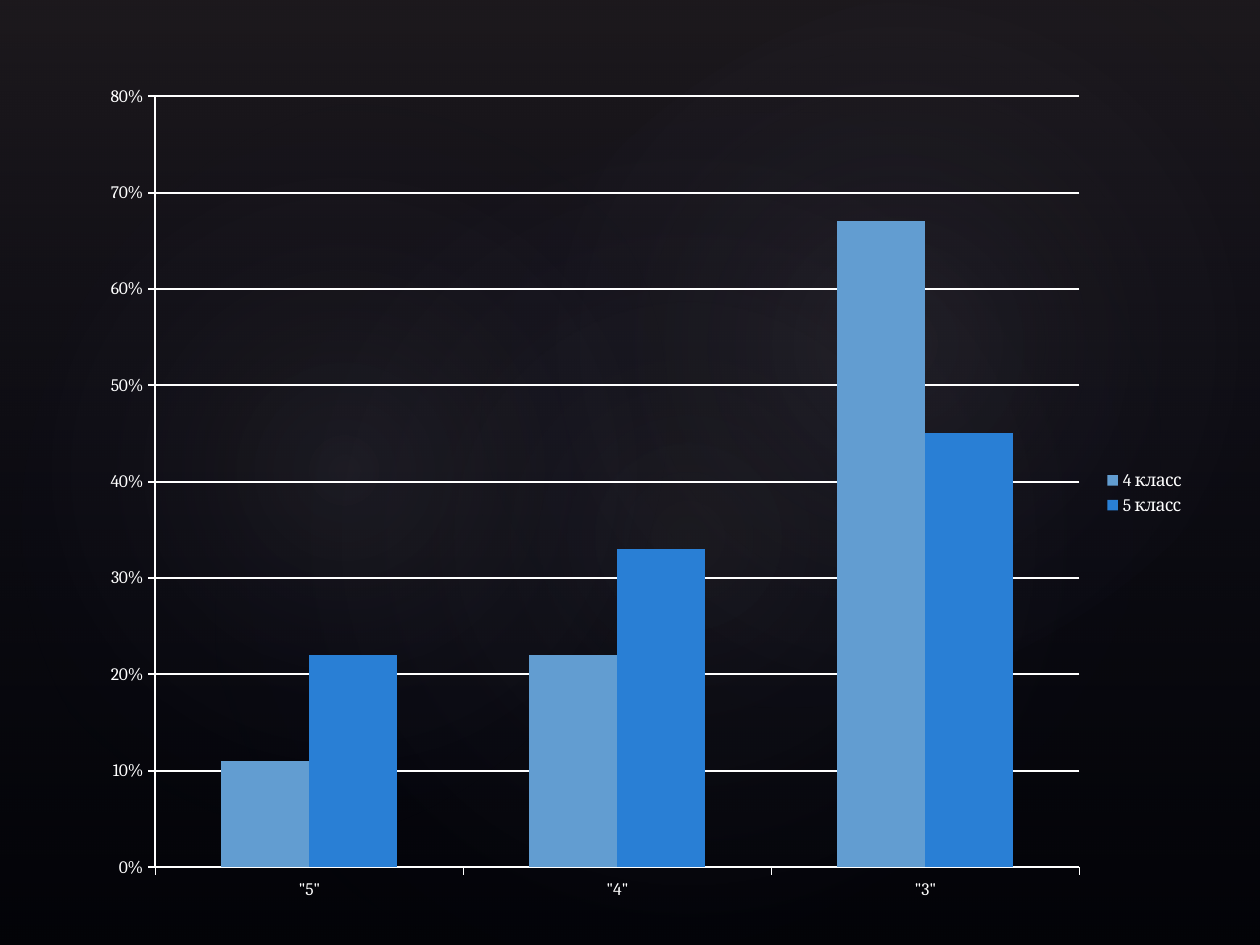
from dataclasses import dataclass

from lxml import etree
from pptx import Presentation
from pptx.chart.data import CategoryChartData
from pptx.dml.color import RGBColor
from pptx.enum.chart import XL_CHART_TYPE, XL_LEGEND_POSITION, XL_TICK_MARK
from pptx.enum.shapes import MSO_SHAPE
from pptx.oxml.ns import qn
from pptx.util import Cm, Pt

COLUMNS = XL_CHART_TYPE.COLUMN_CLUSTERED
LEGEND_RIGHT = XL_LEGEND_POSITION.RIGHT
TICK_OUTSIDE = XL_TICK_MARK.OUTSIDE
TICK_NONE = XL_TICK_MARK.NONE
RECTANGLE = MSO_SHAPE.RECTANGLE
ELLIPSE = MSO_SHAPE.OVAL

SLIDE_WIDTH, SLIDE_HEIGHT = 25.4, 19.05

# left, top, width, height, rotation, opacity of the centre in percent
GLOWS = [
    (3.81, 2.9, 20.12, 15.85, 328.7, 7),
    (-0.76, 3.25, 15.39, 12.45, 294.3, 8),
    (9.09, 0.33, 18.01, 13.21, 328.7, 8),
]
GRADES = ['"5"', '"4"', '"3"']
SHARES = {"4 класс ": (0.11, 0.22, 0.67), "5 класс ": (0.22, 0.33, 0.45)}


@dataclass(frozen=True)
class Theme:
    background: str = "000000"
    veil: str = "504652"
    glow: str = "C4BCC6"
    night: str = "242852"
    text: str = "FFFFFF"
    series: tuple = ("629DD1", "297FD5")
    font: str = "Cambria"
    text_size: float = 10
    grid_width: float = 1.15
    axis_width: float = 0.75


def set_values(target, values):
    for name, value in values.items():
        setattr(target, name, value)


class SlideBuilder:
    def __init__(self, slide, theme):
        self.slide = slide
        self.theme = theme

    def background(self):
        fill = self.slide.background.fill
        fill.solid()
        fill.fore_color.rgb = RGBColor.from_string(self.theme.background)

    def gradient_shape(self, kind, box, stops, rotation=0, angle=None):
        """Stops are (position, colour, opacity) in percent; no angle means radial."""
        shape = self.slide.shapes.add_shape(kind, *map(Cm, box))
        shape.shadow.inherit = False
        shape.rotation = rotation
        shape.line.fill.background()
        shape.fill.gradient()
        gradient = shape.element.spPr.find(qn("a:gradFill"))
        for child in list(gradient):
            gradient.remove(child)
        stop_list = etree.SubElement(gradient, qn("a:gsLst"))
        for position, colour, opacity in stops:
            stop = etree.SubElement(stop_list, qn("a:gs"), pos=str(position * 1000))
            paint = etree.SubElement(stop, qn("a:srgbClr"), val=colour)
            etree.SubElement(paint, qn("a:alpha"), val=str(opacity * 1000))
        if angle is None:
            path = etree.SubElement(gradient, qn("a:path"), path="circle")
            centre = dict.fromkeys("ltrb", "50000")
            etree.SubElement(path, qn("a:fillToRect"), centre)
        else:
            etree.SubElement(gradient, qn("a:lin"), ang=str(angle * 60000), scaled="0")

    def line_style(self, line, width):
        line.width = Pt(width)
        line.color.rgb = RGBColor.from_string(self.theme.text)

    def column_chart(self, box, categories, series):
        theme = self.theme
        data = CategoryChartData(number_format="0%")
        data.categories = categories
        for name, values in series.items():
            data.add_series(name, values)
        chart = self.slide.shapes.add_chart(COLUMNS, *map(Cm, box), data).chart
        set_values(chart, {"has_title": False, "has_legend": True})
        set_values(chart.font, {"name": theme.font, "size": Pt(theme.text_size)})
        chart.font.color.rgb = RGBColor.from_string(theme.text)
        set_values(chart.legend, {"position": LEGEND_RIGHT, "include_in_layout": False})

        plot = chart.plots[0]
        set_values(plot, {"gap_width": 150, "overlap": 0, "vary_by_categories": False})
        for column, colour in zip(plot.series, theme.series):
            column.format.fill.solid()
            column.format.fill.fore_color.rgb = RGBColor.from_string(colour)

        ticks = {"major_tick_mark": TICK_OUTSIDE, "minor_tick_mark": TICK_NONE}
        scale = {"minimum_scale": 0, "maximum_scale": 0.8, "major_unit": 0.1}
        set_values(chart.category_axis, ticks)
        set_values(chart.value_axis, {**ticks, **scale, "has_major_gridlines": True})
        labels = {"number_format": "0%", "number_format_is_linked": False}
        set_values(chart.value_axis.tick_labels, labels)
        self.line_style(chart.category_axis.format.line, theme.axis_width)
        self.line_style(chart.value_axis.format.line, theme.grid_width)
        self.line_style(chart.value_axis.major_gridlines.format.line, theme.grid_width)


def main():
    presentation = Presentation()
    presentation.slide_width = Cm(SLIDE_WIDTH)
    presentation.slide_height = Cm(SLIDE_HEIGHT)
    theme = Theme()
    slide = presentation.slides.add_slide(presentation.slide_layouts[6])
    builder = SlideBuilder(slide, theme)

    builder.background()
    veil_stops = [(0, theme.veil, 36), (100, theme.night, 10)]
    full_slide = (0, 0, SLIDE_WIDTH, SLIDE_HEIGHT)
    builder.gradient_shape(RECTANGLE, full_slide, veil_stops, angle=90)
    for *box, rotation, opacity in GLOWS:
        glow_stops = [(0, theme.glow, opacity), (58, theme.night, 0)]
        builder.gradient_shape(ELLIPSE, box, glow_stops, rotation)
    builder.column_chart((1.78, 1.4, 22.43, 17.07), GRADES, SHARES)

    presentation.save("out.pptx")


if __name__ == "__main__":
    main()
